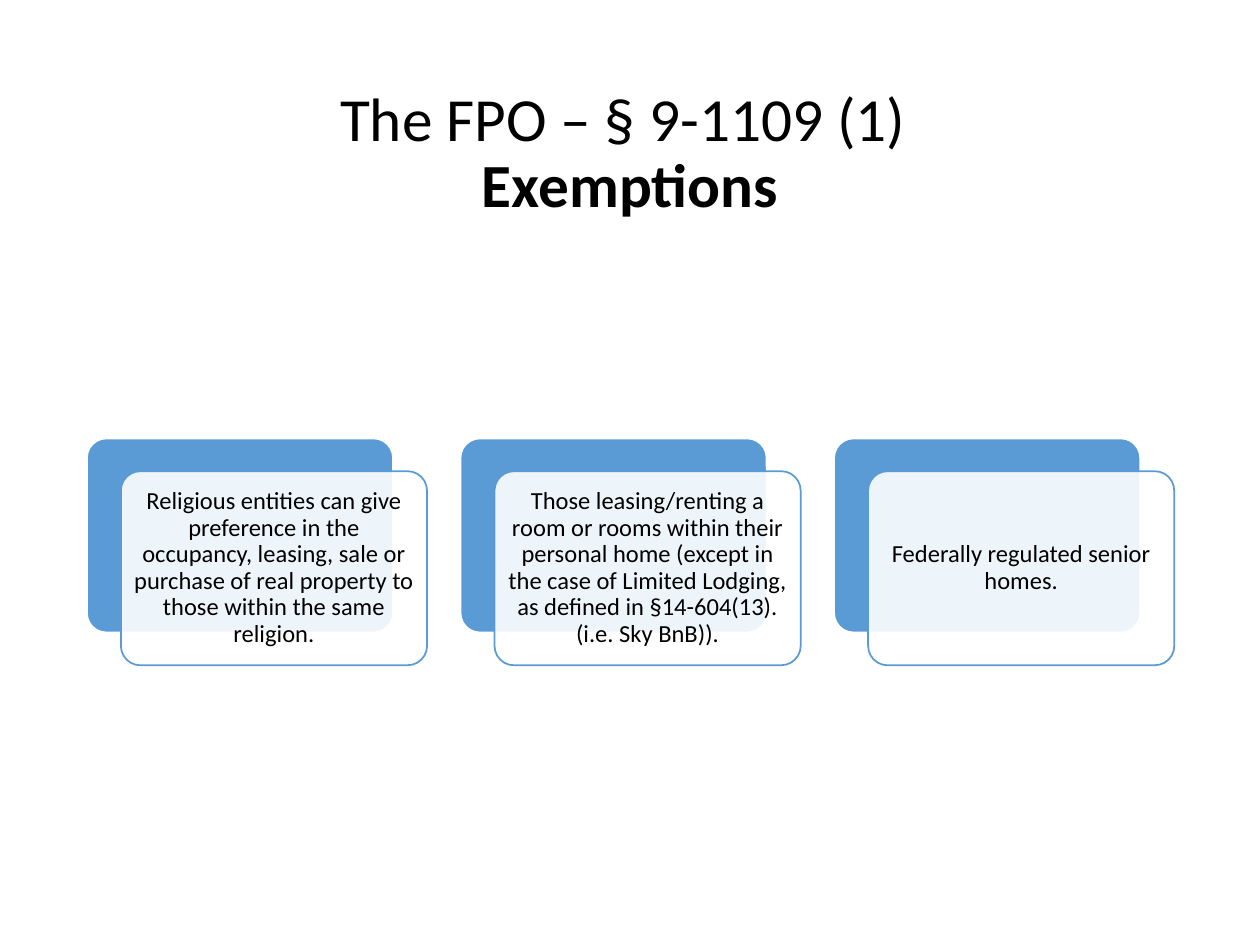
from lxml.etree import SubElement
from pptx import Presentation
from pptx.dml.color import RGBColor
from pptx.enum.shapes import MSO_SHAPE
from pptx.enum.text import MSO_ANCHOR, MSO_AUTO_SIZE, PP_ALIGN
from pptx.oxml.ns import qn
from pptx.util import Inches, Pt

COLORS = {"blue": "5B9BD5", "white": "FFFFFF", "text": "000000"}
FONT = "Calibri"
LEFT, TOP = 0.69, 3.48
COLUMN_STEP = 2.965
CARD_W, CARD_H = 2.43, 1.54
OFFSET_X, OFFSET_Y = 0.27, 0.26
EXEMPTIONS = [
    "Religious entities can give preference in the occupancy, leasing, sale or "
    "purchase of real property to those within the same religion.",
    "Those leasing/renting a room or rooms within their personal home (except in "
    "the case of Limited Lodging, as defined in §14-604(13). (i.e. Sky BnB)).",
    "Federally regulated senior homes.",
]


def rgb(name):
    return RGBColor.from_string(COLORS[name])


def format_paragraph(p, size):
    p.alignment = PP_ALIGN.CENTER
    p.line_spacing = 0.9
    p.font.name = FONT
    p.font.size = Pt(size)
    p.font.color.rgb = rgb("text")


def set_title(s, first_line, bold_line):
    title = s.shapes.title
    title.left, title.top = Inches(LEFT), Inches(0.61)
    title.width, title.height = Inches(10 - 2 * LEFT), Inches(1.24)
    tf = title.text_frame
    tf.auto_size = MSO_AUTO_SIZE.NONE
    tf.vertical_anchor = MSO_ANCHOR.MIDDLE
    p = tf.paragraphs[0]
    format_paragraph(p, 35)
    p.add_run().text = first_line
    p.add_line_break()
    r = p.add_run()
    r.text = bold_line
    r.font.bold = True


def add_panel(s, x, y, fill, line):
    sp = s.shapes.add_shape(MSO_SHAPE.ROUNDED_RECTANGLE, Inches(x), Inches(y),
                            Inches(CARD_W), Inches(CARD_H))
    sp.adjustments[0] = 0.1
    sp.shadow.inherit = False
    sp.fill.solid()
    sp.fill.fore_color.rgb = rgb(fill)
    sp.line.color.rgb = rgb(line)
    sp.line.width = Pt(1)
    return sp


def set_opacity(sp, percent):
    color = sp.fill._xPr.find(qn("a:solidFill"))[0]
    SubElement(color, qn("a:alpha")).set("val", str(percent * 1000))


def add_card(s, column, text):
    """Add a blue panel with a translucent text panel offset in front of it."""
    x = LEFT + column * COLUMN_STEP
    add_panel(s, x, TOP, "blue", "white")
    front = add_panel(s, x + OFFSET_X, TOP + OFFSET_Y, "white", "blue")
    set_opacity(front, 90)
    tf = front.text_frame
    tf.word_wrap = True
    tf.vertical_anchor = MSO_ANCHOR.MIDDLE
    # The rounded corners add their own small inset to this margin.
    tf.margin_left = tf.margin_right = Inches(0.06)
    tf.margin_top = tf.margin_bottom = Inches(0.06)
    p = tf.paragraphs[0]
    p.text = text
    format_paragraph(p, 14)


def main():
    prs = Presentation()
    prs.slide_width, prs.slide_height = Inches(10), Inches(7.5)
    s = prs.slides.add_slide(prs.slide_layouts[5])
    set_title(s, "The FPO – § 9-1109 (1) ", "Exemptions")
    for column, text in enumerate(EXEMPTIONS):
        add_card(s, column, text)
    prs.save("out.pptx")


if __name__ == "__main__":
    main()
